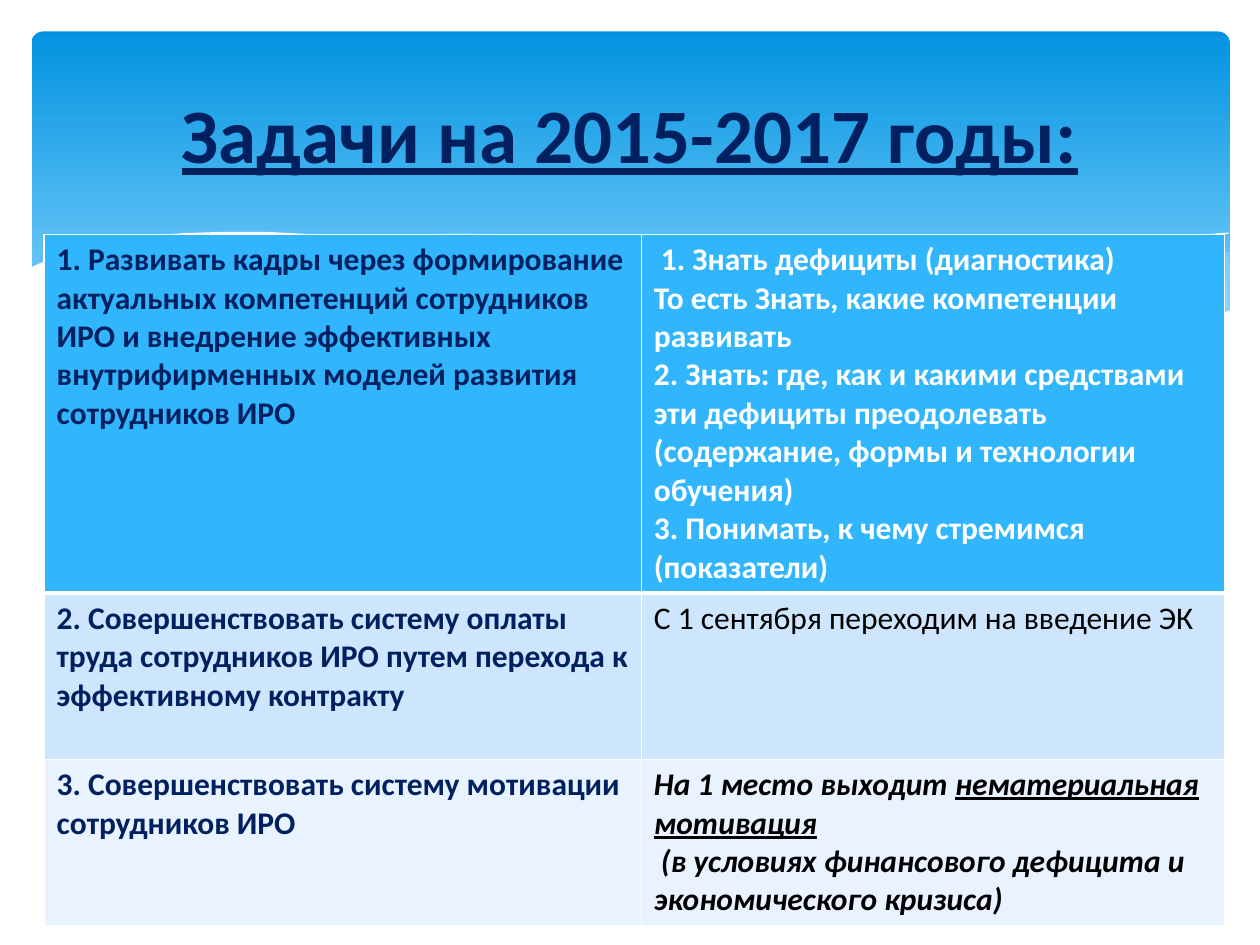
from lxml.etree import SubElement
from pptx import Presentation
from pptx.dml.color import RGBColor
from pptx.enum.shapes import MSO_SHAPE as Shape
from pptx.enum.text import MSO_ANCHOR as Anchor, PP_ALIGN as Align
from pptx.oxml.ns import qn
from pptx.util import Inches, Pt

NAVY, WHITE, BLACK = "002060", "FFFFFF", "000000"
TITLE = "Задачи на 2015-2017 годы:"

TASKS = [
    {
        "task": "1. Развивать кадры через формирование актуальных компетенций сотрудников ИРО "
                "и внедрение эффективных внутрифирменных моделей развития сотрудников ИРО",
        "notes": [
            [(" 1. Знать дефициты (диагностика)", {})],
            [("То есть Знать, какие компетенции развивать", {})],
            [("2. Знать: где, как и какими средствами эти дефициты преодолевать "
              "(содержание, формы и технологии обучения)", {})],
            [("3. Понимать, к чему стремимся (показатели)", {})],
        ],
        "style": {"color": WHITE, "bold": True}, "fill": "31B6FD", "height": 2.83,
    },
    {
        "task": "2. Совершенствовать систему оплаты труда сотрудников ИРО "
                "путем перехода к эффективному контракту",
        "notes": [[("С 1 сентября переходим на введение ЭК", {})]],
        "style": {"color": BLACK}, "fill": "CEE5FE", "height": 1.32,
    },
    {
        "task": "3. Совершенствовать систему мотивации сотрудников ИРО",
        "notes": [
            [("На 1 место выходит ", {}), ("нематериальная мотивация", {"underline": True})],
            [(" (в условиях финансового дефицита и экономического кризиса)", {})],
        ],
        "style": {"color": BLACK, "bold": True, "italic": True},
        "fill": "E8F3FF", "height": 1.32,
    },
]
COLUMNS = [4.74, 4.63]

PALE_WAVES = [
    (29, [(9.76, 2), (9.48, 2.04), (9.06, 2.13), (8.61, 2.23), (7.79, 2.42), (7.06, 2.57),
          (6.61, 2.65), (7.05, 2.71), (7.57, 2.76), (8.14, 2.78), (8.63, 2.75),
          (9.05, 2.69), (9.42, 2.59), (9.76, 2.47)]),
    (40, [(8.93, 2.73), (8.37, 2.65), (7.75, 2.54), (7.06, 2.4), (6.29, 2.22), (5.69, 2.08),
          (5.14, 1.98), (4.65, 1.91), (4.2, 1.87), (3.61, 1.85), (3.13, 1.88), (2.86, 1.91),
          (3.42, 1.99), (4.04, 2.11), (4.91, 2.32), (5.66, 2.48), (6.34, 2.61),
          (6.95, 2.7), (7.61, 2.77), (8.18, 2.78), (8.57, 2.77)]),
]
WAVE_LINES = [
    [(3.09, 1.95), (3.44, 1.9), (4.01, 1.87), (4.69, 1.89), (5.33, 1.94), (6.08, 2.04),
     (6.95, 2.19), (7.95, 2.41), (9.07, 2.72)],
    [(6.13, 2.57), (6.72, 2.41), (7.48, 2.23), (8.36, 2.04), (8.95, 1.94), (9.38, 1.88),
     (9.75, 1.85)],
]
WHITE_WAVE = [
    (9.77, 2.46), (9.5, 2.56), (9.1, 2.67), (8.63, 2.74), (8.09, 2.77), (7.44, 2.74),
    (6.68, 2.65), (5.79, 2.5), (5.03, 2.33), (4.47, 2.2), (3.91, 2.07), (3.4, 1.97),
    (2.92, 1.9), (2.5, 1.86), (2.11, 1.84), (1.77, 1.84), (1.46, 1.85), (1.19, 1.87),
    (0.95, 1.91), (0.76, 1.95), (0.59, 1.99), (0.46, 2.03), (0.36, 2.07), (0.23, 2.13),
    (0.23, 3.29), (9.77, 3.29),
]


def rgb(code):
    return RGBColor.from_string(code)


def add_text(para, text, size=18, color=BLACK, bold=False, italic=False, underline=False):
    span = para.add_run()
    span.text = text
    font = span.font
    font.name, font.size, font.color.rgb = "Calibri", Pt(size), rgb(color)
    font.bold, font.italic, font.underline = bold, italic, underline


def add_wave(page, points, fill=None, alpha=100):
    start, *rest = [(Inches(x), Inches(y)) for x, y in points]
    builder = page.shapes.build_freeform(*start)
    builder.add_line_segments(rest, close=fill is not None)
    wave = builder.convert_to_shape()
    wave.shadow.inherit = False
    if fill:
        wave.fill.solid()
        wave.fill.fore_color.rgb = rgb(fill)
        wave.line.fill.background()
        color = wave.fill._xPr.find(qn("a:solidFill"))[0]
        SubElement(color, qn("a:alpha"), val=str(alpha * 1000))
    else:
        wave.fill.background()
        wave.line.color.rgb = rgb(WHITE)
        wave.line.width = Pt(0)


def add_backdrop(page):
    band = page.shapes.add_shape(Shape.ROUNDED_RECTANGLE, Inches(0.25), Inches(0.25),
                                 Inches(9.51), Inches(2.7))
    band.adjustments[0] = 0.034
    band.shadow.inherit = False
    band.line.fill.background()
    band.fill.gradient()
    band.fill.gradient_angle = 270
    stops = [(0, "0293E0"), (0.9, "83D3FE")]
    for stop, (position, color) in zip(band.fill.gradient_stops, stops):
        stop.position, stop.color.rgb = position, rgb(color)
    for alpha, points in PALE_WAVES:
        add_wave(page, points, "C6E7FC", alpha)
    for points in WAVE_LINES:
        add_wave(page, points)
    add_wave(page, WHITE_WAVE, WHITE)


def format_cell(cell, fill, top, bottom):
    properties = cell._tc.get_or_add_tcPr()
    for side, width in zip("LRTB", (1, 1, top, bottom)):
        border = SubElement(properties, qn(f"a:ln{side}"), w=str(Pt(width)))
        SubElement(SubElement(border, qn("a:solidFill")), qn("a:srgbClr"), val=WHITE)
    cell.fill.solid()
    cell.fill.fore_color.rgb = rgb(fill)


def fill_cell(cell, paragraphs, style):
    frame = cell.text_frame
    for index, spans in enumerate(paragraphs):
        para = frame.add_paragraph() if index else frame.paragraphs[0]
        for text, extra in spans:
            add_text(para, text, **{**style, **extra})


def add_tasks(page):
    height = sum(row["height"] for row in TASKS)
    table = page.shapes.add_table(len(TASKS), len(COLUMNS), Inches(0.35), Inches(1.86),
                                  Inches(sum(COLUMNS)), Inches(height)).table
    for column, width in zip(table.columns, COLUMNS):
        column.width = Inches(width)
    for index, row in enumerate(TASKS):
        table.rows[index].height = Inches(row["height"])
        left, right = table.rows[index].cells
        fill_cell(left, [[(row["task"], {})]], {"color": NAVY, "bold": True})
        fill_cell(right, row["notes"], row["style"])
        for cell in (left, right):
            format_cell(cell, row["fill"], 3 if index == 1 else 1, 3 if index == 0 else 1)


def add_title(page):
    title = page.shapes.title
    title.left, title.top = Inches(0.5), Inches(0.37)
    title.width, title.height = Inches(9), Inches(1.37)
    title.text_frame.vertical_anchor = Anchor.MIDDLE
    para = title.text_frame.paragraphs[0]
    para.alignment = Align.CENTER
    add_text(para, TITLE, size=44, color=NAVY, bold=True, underline=True)
    page.shapes._spTree.append(title._element)


def main():
    deck = Presentation()
    deck.slide_width, deck.slide_height = Inches(10), Inches(7.5)
    page = deck.slides.add_slide(deck.slide_layouts[5])
    add_backdrop(page)
    add_tasks(page)
    add_title(page)
    deck.save("out.pptx")


if __name__ == "__main__":
    main()
